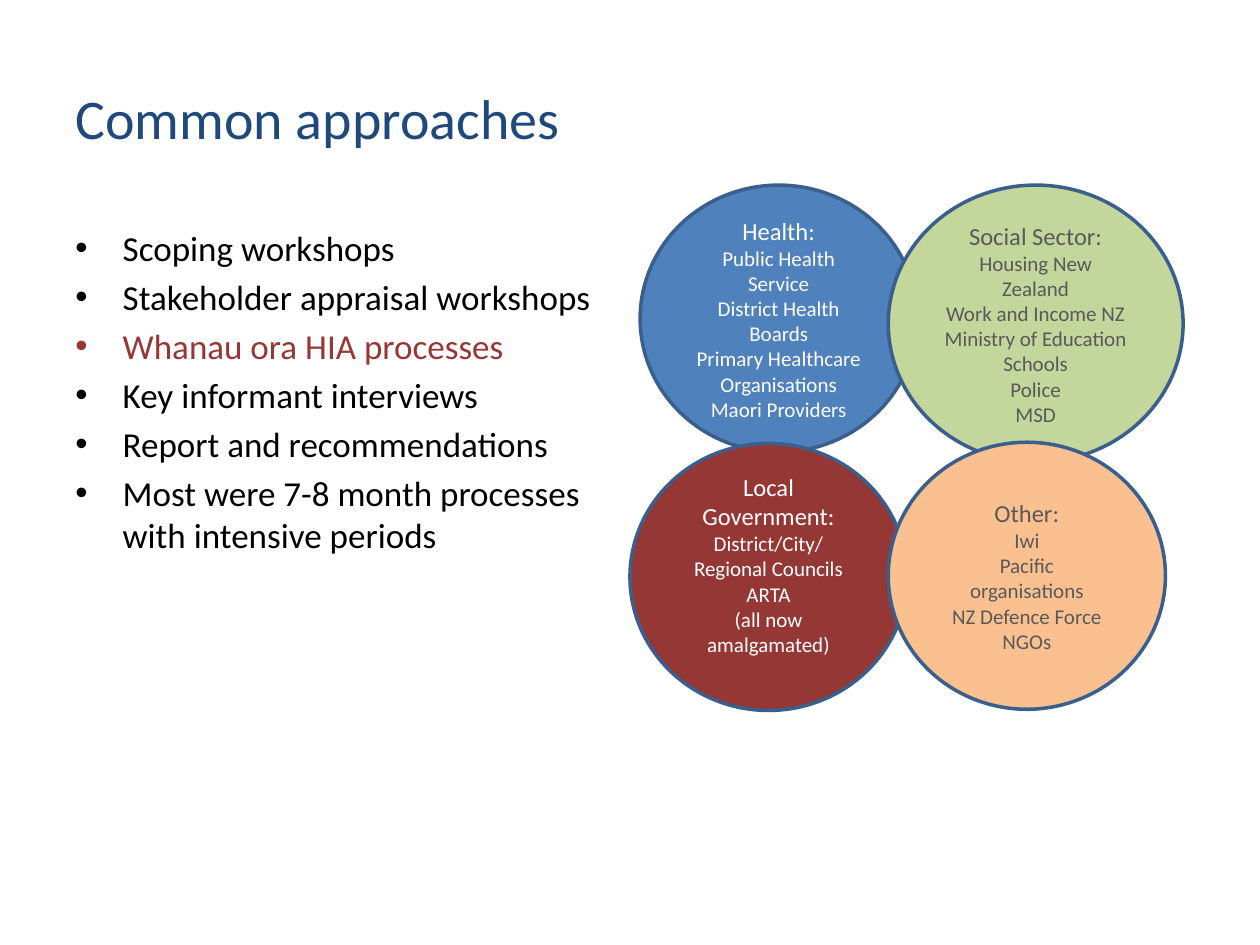
from lxml import etree
from pptx import Presentation
from pptx.dml.color import RGBColor
from pptx.enum.shapes import MSO_SHAPE
from pptx.enum.text import MSO_ANCHOR, PP_ALIGN
from pptx.oxml.ns import qn
from pptx.util import Pt

OVAL = MSO_SHAPE.OVAL
MIDDLE = MSO_ANCHOR.MIDDLE
CENTER = PP_ALIGN.CENTER
FONT = "Calibri"
COLORS = {
    "title": "1F497D",
    "text": "000000",
    "red": "953735",
    "blue": "4F81BD",
    "green": "C3D69B",
    "orange": "FAC090",
    "outline": "3A5F8C",
    "white": "FFFFFF",
    "gray": "595959",
}

APPROACHES = [
    ("Scoping workshops", "text"),
    ("Stakeholder appraisal workshops", "text"),
    ("Whanau ora HIA processes", "red"),
    ("Key informant interviews", "text"),
    ("Report and recommendations", "text"),
    ("Most were 7-8 month processes with intensive periods", "text"),
]

SECTORS = [
    ((365.8, 105.8, 158.4, 152.6), "blue", "white", 3.6, "Health:",
     ["Public Health Service", "District Health Boards",
      "Primary Healthcare Organisations", "Maori Providers"]),
    ((507.6, 105.8, 168.5, 158.4), "green", "gray", 3.6, "Social Sector:",
     ["Housing New Zealand", "Work and Income NZ", "Ministry of Education",
      "Schools", "Police", "MSD"]),
    ((360, 253.4, 158.4, 152.6), "red", "white", 18, "Local Government:",
     ["District/City/ Regional Councils", "ARTA", "(all now amalgamated)"]),
    ((507.6, 252.7, 158.4, 152.6), "orange", "gray", 3.6, "Other:",
     ["Iwi", "Pacific organisations", "NZ Defence Force", "NGOs"]),
]


def color(name):
    """Return the named colour."""
    return RGBColor.from_string(COLORS[name])


def add_run(paragraph, text, size, color_name):
    """Add one formatted run to a paragraph."""
    run = paragraph.add_run()
    run.text = text
    run.font.name = FONT
    run.font.size = Pt(size)
    run.font.color.rgb = color(color_name)


def get_paragraph(frame, index):
    """Return the first paragraph of a frame, or a new one after it."""
    return frame.add_paragraph() if index else frame.paragraphs[0]


def add_text_frame(slide, box):
    """Add a wrapping text box and return its text frame."""
    frame = slide.shapes.add_textbox(*map(Pt, box)).text_frame
    frame.word_wrap = True
    return frame


def add_title(slide, text):
    """Add the slide title."""
    frame = add_text_frame(slide, (36, 43.9, 648, 46.1))
    frame.vertical_anchor = MIDDLE
    add_run(frame.paragraphs[0], text, 32, "title")


def set_bullet(paragraph, indent):
    """Give a paragraph a round bullet with a hanging indent in points."""
    properties = paragraph._p.get_or_add_pPr()
    properties.set("marL", str(Pt(indent)))
    properties.set("indent", str(-Pt(indent)))
    etree.SubElement(properties, qn("a:buFont")).set("typeface", "Arial")
    etree.SubElement(properties, qn("a:buChar")).set("char", "•")


def add_bullets(slide, items):
    """Add the bulleted list of approaches."""
    frame = add_text_frame(slide, (36, 126, 318.2, 356.4))
    for index, (text, color_name) in enumerate(items):
        paragraph = get_paragraph(frame, index)
        set_bullet(paragraph, 27)
        if index:
            paragraph.space_before = Pt(4)
        add_run(paragraph, text, 20, color_name)


def add_sector(slide, box, fill, text_color, bottom, heading, members):
    """Add an ellipse holding a sector heading and its members."""
    shape = slide.shapes.add_shape(OVAL, *map(Pt, box))
    shape.shadow.inherit = False
    shape.fill.solid()
    shape.fill.fore_color.rgb = color(fill)
    shape.line.color.rgb = color("outline")
    shape.line.width = Pt(2)
    frame = shape.text_frame
    frame.word_wrap = True
    frame.vertical_anchor = MIDDLE
    frame.margin_bottom = Pt(bottom)
    for index, text in enumerate([heading, *members]):
        paragraph = get_paragraph(frame, index)
        paragraph.alignment = CENTER
        add_run(paragraph, text, 12 if index else 14, text_color)


def main():
    """Build and save the slide."""
    presentation = Presentation()
    presentation.slide_width = Pt(720)
    presentation.slide_height = Pt(540)
    slide = presentation.slides.add_slide(presentation.slide_layouts[6])
    add_title(slide, "Common approaches")
    add_bullets(slide, APPROACHES)
    for sector in SECTORS:
        add_sector(slide, *sector)
    presentation.save("out.pptx")


if __name__ == "__main__":
    main()
